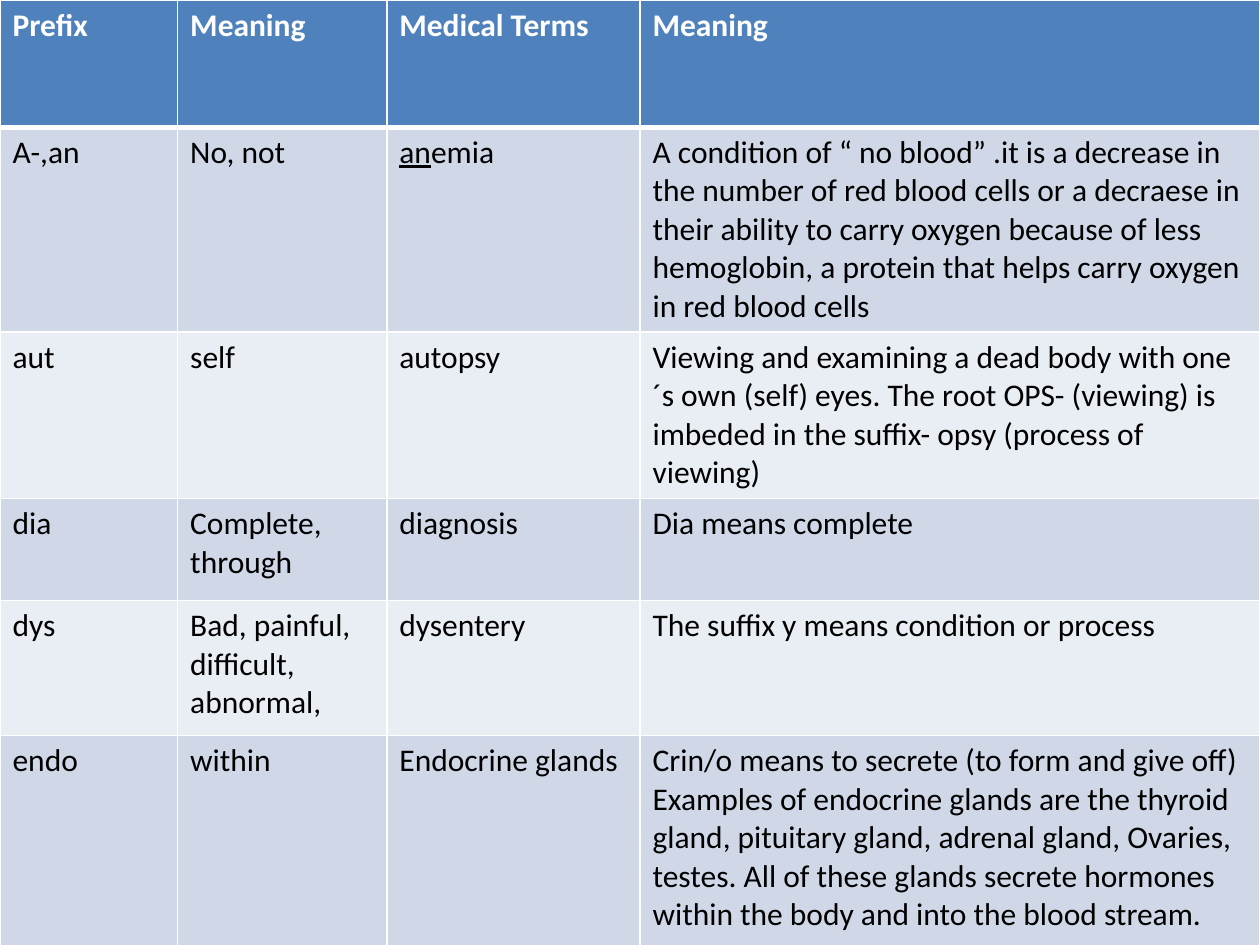
from lxml import etree
from pptx import Presentation
from pptx.dml.color import RGBColor
from pptx.oxml.ns import qn
from pptx.util import Inches, Pt

WHITE = RGBColor(0xFF, 0xFF, 0xFF)
BLACK = RGBColor(0x00, 0x00, 0x00)
HEADER_BLUE = RGBColor(0x4F, 0x81, 0xBD)
BAND_DARK = RGBColor(0xD0, 0xD8, 0xE8)
BAND_LIGHT = RGBColor(0xE9, 0xED, 0xF4)

COLUMN_WIDTHS = [1.41, 1.66, 2.01, 4.92]
ROW_HEIGHTS = [1.01, 1.46, 1.07, 0.81, 1.07, 2.08]
UNDERLINED_PREFIX = "an"

GLOSSARY = [
    ["Prefix", "Meaning", "Medical Terms", "Meaning"],
    ["A-,an", "No, not", "anemia",
     "A condition of “ no blood” .it is a decrease in the number of red blood cells "
     "or a decraese in their ability to carry oxygen because of less hemoglobin, "
     "a protein that helps carry oxygen in red blood cells"],
    ["aut", "self", "autopsy",
     "Viewing and examining a dead body with one´s own (self) eyes. The root OPS- "
     "(viewing) is imbeded in the suffix- opsy (process of viewing)"],
    ["dia", "Complete, through", "diagnosis", "Dia means complete"],
    ["dys", "Bad, painful, difficult, abnormal,", "dysentery",
     "The suffix y means condition or process"],
    ["endo", "within", "Endocrine glands",
     "Crin/o means to secrete (to form and give off)\n"
     "Examples of endocrine glands are the thyroid gland, pituitary gland, adrenal "
     "gland, Ovaries, testes. All of these glands secrete hormones within the body "
     "and into the blood stream."],
]


def add_border(cell, side, points):
    """Draw a white border on one side of a cell."""
    properties = cell._tc.get_or_add_tcPr()
    border = etree.SubElement(properties, qn(f"a:ln{side}"), w=str(Pt(points)))
    solid = etree.SubElement(border, qn("a:solidFill"))
    etree.SubElement(solid, qn("a:srgbClr"), val=str(WHITE))


def add_run(paragraph, wording, is_header, underline=False):
    """Add one run in the header or body style."""
    run = paragraph.add_run()
    run.text = wording
    run.font.name = "Calibri"
    run.font.size = Pt(18)
    run.font.bold = is_header
    run.font.underline = underline
    run.font.color.rgb = WHITE if is_header else BLACK


def fill_cell(cell, entry, row):
    """Style one glossary cell and write its entry."""
    is_header = row == 0
    for side in "LRTB":
        below_header = (row, side) in ((0, "B"), (1, "T"))
        add_border(cell, side, 3 if below_header else 1)
    cell.fill.solid()
    band = BAND_DARK if row % 2 else BAND_LIGHT
    cell.fill.fore_color.rgb = HEADER_BLUE if is_header else band

    frame = cell.text_frame
    for index, line in enumerate(entry.split("\n")):
        paragraph = frame.add_paragraph() if index else frame.paragraphs[0]
        if line == "anemia":
            add_run(paragraph, UNDERLINED_PREFIX, is_header, underline=True)
            line = line.removeprefix(UNDERLINED_PREFIX)
        add_run(paragraph, line, is_header)


def add_glossary(slide, left, top, width, height):
    """Place the table of prefixes in the given box."""
    table = slide.shapes.add_table(
        len(GLOSSARY), len(COLUMN_WIDTHS), left, top, width, height).table
    for column, share in zip(table.columns, COLUMN_WIDTHS):
        column.width = int(width * share / sum(COLUMN_WIDTHS))
    for row, share in zip(table.rows, ROW_HEIGHTS):
        row.height = int(height * share / sum(ROW_HEIGHTS))
    for row, entries in enumerate(GLOSSARY):
        for column, entry in enumerate(entries):
            fill_cell(table.cell(row, column), entry, row)


def main():
    """Build and save the slide."""
    presentation = Presentation()
    presentation.slide_width = Inches(10)
    presentation.slide_height = Inches(7.5)
    slide = presentation.slides.add_slide(presentation.slide_layouts[6])
    add_glossary(slide, Inches(0), Inches(0), Inches(10), Inches(7.5))
    presentation.save("out.pptx")


if __name__ == "__main__":
    main()
